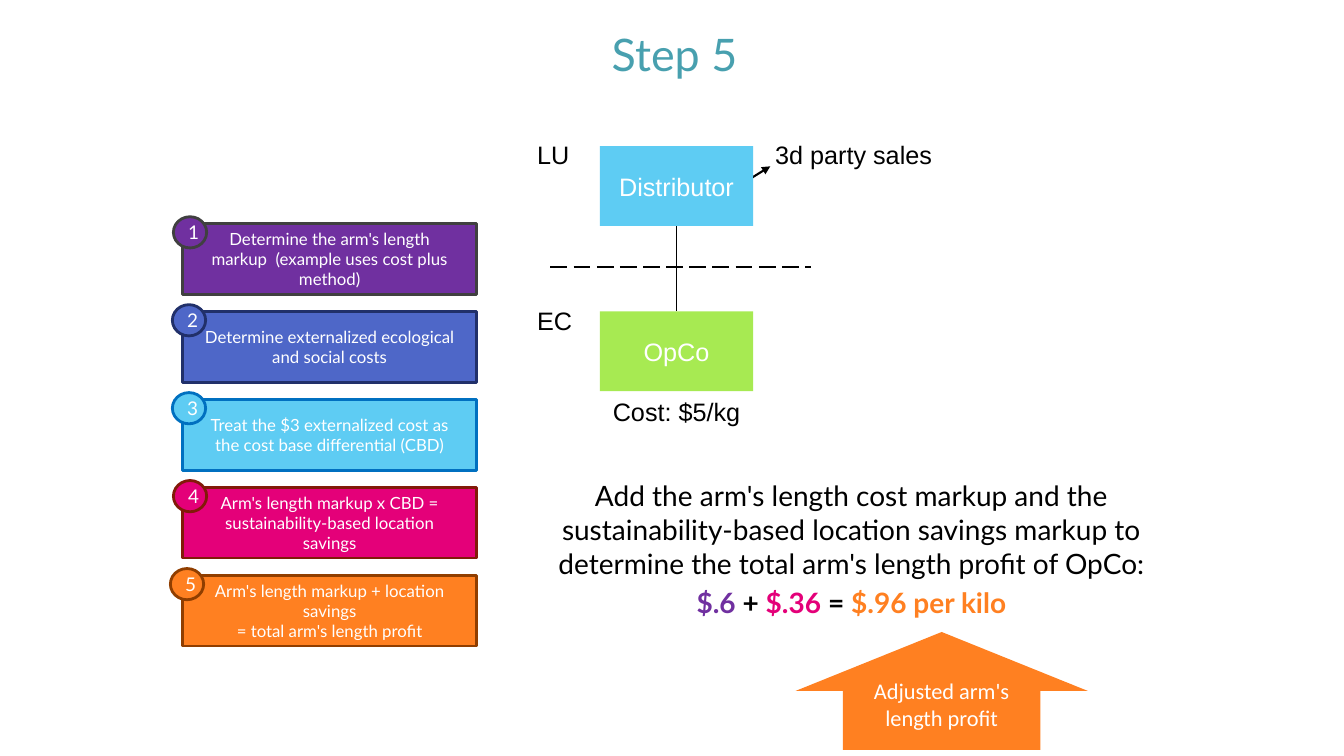
from lxml.etree import SubElement
from pptx import Presentation
from pptx.dml.color import RGBColor
from pptx.enum.dml import MSO_LINE
from pptx.enum.shapes import MSO_CONNECTOR, MSO_SHAPE
from pptx.enum.text import MSO_ANCHOR as Anchor, PP_ALIGN as Align
from pptx.oxml.ns import qn
from pptx.util import Inches, Pt


def color(hex_string):
    return RGBColor.from_string(hex_string)


def write(shape, text, size, font, hex_string, align=Align.CENTER, anchor=Anchor.MIDDLE):
    frame = shape.text_frame
    frame.text = text
    frame.word_wrap = True
    frame.vertical_anchor = anchor
    for paragraph in frame.paragraphs:
        paragraph.alignment = align
        paragraph.font.size = Pt(size)
        paragraph.font.name = font
        paragraph.font.color.rgb = color(hex_string)
    return frame


presentation = Presentation()
presentation.slide_width = Inches(13.33)
presentation.slide_height = Inches(7.5)
slide = presentation.slides.add_slide(presentation.slide_layouts[5])
shapes = slide.shapes

# Title
title = shapes.title
title.left, title.top, title.width, title.height = map(Inches, (2.19, 0.3, 9, 0.47))
write(title, "Step 5", 32, "Lato", "48A0AF")

# Profit statement
statement = shapes.add_textbox(Inches(5.23), Inches(4.72), Inches(6.43), Inches(1.5))
frame = write(
    statement,
    "Add the arm's length cost markup and the sustainability-based location savings "
    "markup to determine the total arm's length profit of OpCo:",
    20, "Lato", "000000", anchor=Anchor.TOP,
)
frame.margin_left = frame.margin_right = Inches(0.06)
frame.margin_top = frame.margin_bottom = Inches(0.03)
formula = frame.add_paragraph()
formula.alignment = Align.CENTER
formula.font.size = Pt(20)
formula.font.name = "Lato"
formula.font.bold = True
for text, hex_string in [
    ("$.6 ", "7030A0"), ("+ ", "000000"), ("$.36 ", "E40079"),
    ("= ", "000000"), ("$.96 per kilo", "FF8021"),
]:
    run = formula.add_run()
    run.text = text
    run.font.color.rgb = color(hex_string)
for paragraph in frame.paragraphs:
    paragraph.space_before = Pt(4)

# Arrow pointing at the result
arrow = shapes.add_shape(
    MSO_SHAPE.UP_ARROW, Inches(7.89), Inches(6.27), Inches(2.9), Inches(1.17))
arrow.adjustments[0] = 0.676
arrow.adjustments[1] = 0.5
arrow.shadow.inherit = False
arrow.fill.solid()
arrow.fill.fore_color.rgb = color("FF8021")
arrow.line.fill.background()
write(arrow, "Adjusted arm's length profit", 16, "Calibri", "FFFFFF", anchor=Anchor.TOP)

# Numbered steps: text, fill, outline, badge left
steps = [
    ("Determine the arm's length markup  (example uses cost plus method)",
     "7030A0", "404040", 1.72),
    ("Determine externalized ecological and social costs", "4E67C8", "21306A", 1.71),
    ("Treat the $3 externalized cost as the cost base differential (CBD)",
     "5ECCF3", "0070C0", 1.71),
    ("Arm's length markup x CBD = sustainability-based location savings",
     "E40079", "821A08", 1.72),
    ("Arm's length markup + location savings\v= total arm's length profit",
     "FF8021", "903E00", 1.69),
]
for number, (text, fill, outline, badge_left) in enumerate(steps, 1):
    top = 2.22 + 0.8725 * (number - 1)
    box = shapes.add_shape(
        MSO_SHAPE.RECTANGLE, Inches(1.81), Inches(top), Inches(2.92), Inches(0.7))
    badge = shapes.add_shape(
        MSO_SHAPE.OVAL, Inches(badge_left), Inches(top - 0.07), Inches(0.33), Inches(0.31))
    for shape in (box, badge):
        shape.shadow.inherit = False
        shape.fill.solid()
        shape.fill.fore_color.rgb = color(fill)
        shape.line.color.rgb = color(outline)
        shape.line.width = Pt(2)
    frame = write(box, text, 12, "Lato", "FFFFFF")
    frame.margin_left = frame.margin_right = Inches(0.18)
    write(badge, str(number), 13.5, "Lato", "FFFFFF")

# Connectors of the structure chart
connectors = []
for x1, y1, x2, y2, width in [
    (7.43, 1.78, 7.64, 1.65, 1.5),
    (5.46, 2.65, 8.04, 2.65, 1.5),
    (6.71, 3.09, 6.71, 2.24, 1),
]:
    connector = shapes.add_connector(
        MSO_CONNECTOR.STRAIGHT, Inches(x1), Inches(y1), Inches(x2), Inches(y2))
    connector.line.color.rgb = color("000000")
    connector.line.width = Pt(width)
    connectors.append(connector)
sales_arrow, border, ownership = connectors
border.line.dash_style = MSO_LINE.LONG_DASH
SubElement(sales_arrow.line._get_or_add_ln(), qn("a:tailEnd"), type="triangle")
for connector in connectors:
    SubElement(connector._element.spPr, qn("a:effectLst"))

# Companies
companies = []
for name, top, fill in [("Distributor", 1.45, "5ECCF3"), ("OpCo", 3.09, "A7EA52")]:
    company = shapes.add_shape(
        MSO_SHAPE.RECTANGLE, Inches(5.95), Inches(top), Inches(1.52), Inches(0.79))
    company.shadow.inherit = False
    company.fill.solid()
    company.fill.fore_color.rgb = color(fill)
    company.line.fill.background()
    write(company, name, 18, "Arial", "FFFFFF")
    companies.append(company)
distributor, opco = companies
ownership.begin_connect(opco, 0)
ownership.end_connect(distributor, 2)

# Labels
for text, left, top, width, align in [
    ("LU", 5.23, 1.33, 0.6, Align.LEFT),
    ("EC", 5.23, 2.98, 0.6, Align.LEFT),
    ("3d party sales", 7.59, 1.33, 2.14, Align.LEFT),
    ("Cost: $5/kg", 5.95, 3.88, 1.52, Align.CENTER),
]:
    label = shapes.add_textbox(Inches(left), Inches(top), Inches(width), Inches(0.4))
    write(label, text, 18, "Arial", "000000", align, Anchor.TOP)

presentation.save("out.pptx")
